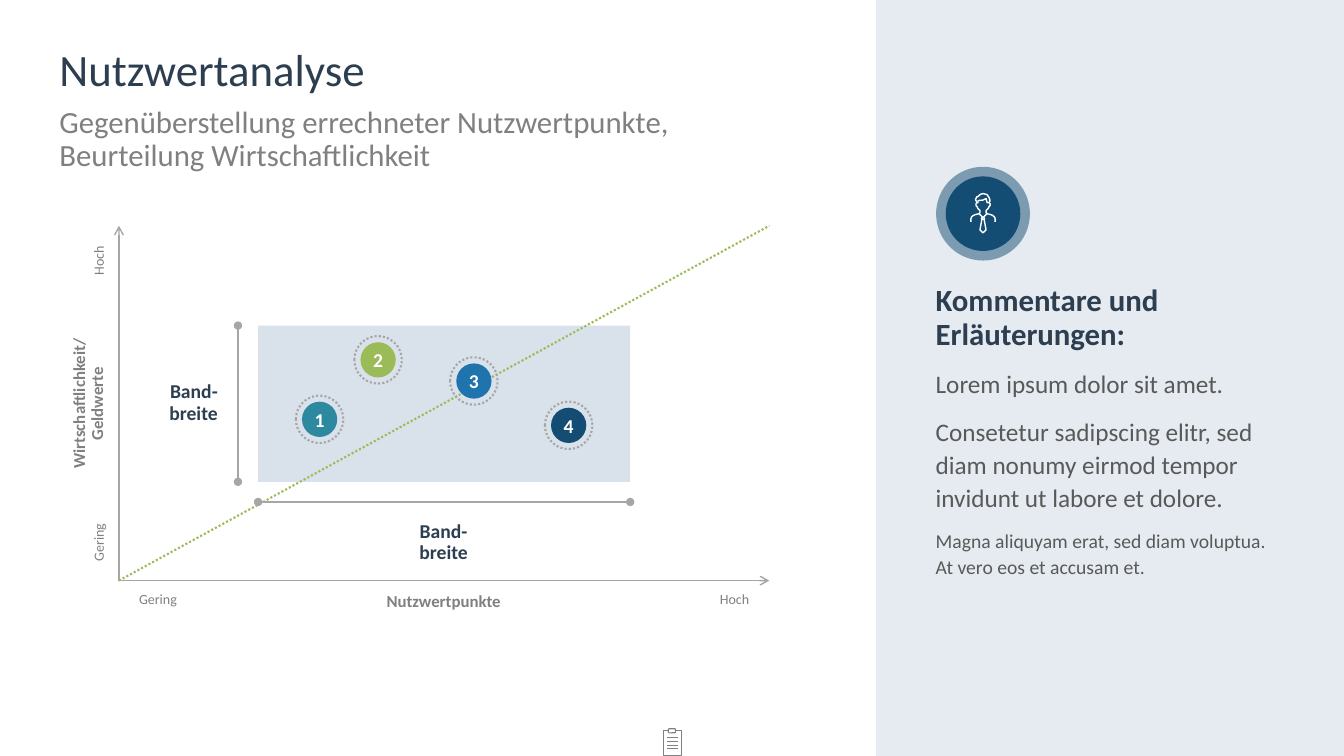
from pptx import Presentation
from pptx.dml.color import RGBColor
from pptx.enum.dml import MSO_LINE
from pptx.enum.shapes import MSO_CONNECTOR, MSO_SHAPE
from pptx.enum.text import MSO_ANCHOR, PP_ALIGN
from pptx.oxml.ns import qn
from pptx.util import Inches, Pt
from lxml import etree

RECT, OVAL, ROUND = MSO_SHAPE.RECTANGLE, MSO_SHAPE.OVAL, MSO_SHAPE.ROUNDED_RECTANGLE
LEFT, CENTER, RIGHT = PP_ALIGN.LEFT, PP_ALIGN.CENTER, PP_ALIGN.RIGHT
TOP, MIDDLE, BOTTOM = MSO_ANCHOR.TOP, MSO_ANCHOR.MIDDLE, MSO_ANCHOR.BOTTOM
STRAIGHT = MSO_CONNECTOR.STRAIGHT
DOTTED = MSO_LINE.ROUND_DOT

WHITE = RGBColor(0xFF, 0xFF, 0xFF)
DARK = RGBColor(0x2C, 0x3E, 0x50)
TEXT = RGBColor(0x59, 0x59, 0x59)
GRAY = RGBColor(0x80, 0x80, 0x80)
LINE = RGBColor(0xA6, 0xA6, 0xA6)
PANEL = RGBColor(0xCD, 0xD8, 0xE4)
BAND = RGBColor(0x6A, 0x8B, 0xAD)
NAVY = RGBColor(0x14, 0x4D, 0x73)
BLUE = RGBColor(0x1F, 0x74, 0xAD)
TEAL = RGBColor(0x2D, 0x89, 0x9F)
GREEN = RGBColor(0x9B, 0xBB, 0x59)

MARKERS = [("1", 3.17, 4.16, TEAL), ("2", 3.75, 3.57, GREEN),
           ("3", 4.7, 3.78, BLUE), ("4", 5.64, 4.22, NAVY)]

TIE = [(-1, 5), (-3, 16), (0, 19)]
SHOULDER = [(12, 8), (12, 5), (11.5, 3.5), (10, 2), (8, 1), (4, 0), (3, -1), (3, -3),
            (5, -5), (6, -7), (7, -8), (7, -10), (6, -11)]
PERSON = [
    [(2, 4), (0, 6), (-2, 4)],
    TIE, [(-x, y) for x, y in TIE],
    SHOULDER, [(-x, y) for x, y in SHOULDER],
    [(6, -11), (4, -11), (3, -15), (0, -13.5), (-5, -13), (-5, -11), (-6, -11)],
    [(4, 0), (0, 4), (-4, 0)],
    [(-6, -11), (-7.5, -14), (-6, -17), (-5, -17), (-3, -19), (0, -20),
     (4, -19), (6, -16), (7, -13), (6, -11)],
]


def write(p, text, size=14, color=DARK, bold=False, align=LEFT, spacing=0.9, after=10):
    p.text = text
    p.alignment = align
    p.line_spacing = spacing
    p.space_after = Pt(after)
    for r in p.runs:
        r.font.name = "Calibri"
        r.font.size = Pt(size)
        r.font.bold = bold
        r.font.color.rgb = color


def frame(s, anchor=TOP, wrap=True, insets=(0, 0, 0, 0)):
    tf = s.text_frame
    tf.word_wrap = wrap
    tf.vertical_anchor = anchor
    tf.margin_left, tf.margin_top, tf.margin_right, tf.margin_bottom = map(Inches, insets)
    return tf


def label(slide, text, x, y, w, h, anchor=TOP, wrap=True, upright=False, **fmt):
    s = slide.shapes.add_textbox(Inches(x), Inches(y), Inches(w), Inches(h))
    tf = frame(s, anchor, wrap)
    if upright:
        tf._txBody.bodyPr.set("vert", "vert270")
    write(tf.paragraphs[0], text, **fmt)


def shape(slide, kind, x, y, w, h, fill=None, alpha=None, line=None, width=1, dash=None):
    s = slide.shapes.add_shape(kind, Inches(x), Inches(y), Inches(w), Inches(h))
    s.shadow.inherit = False
    if fill is None:
        s.fill.background()
    else:
        s.fill.solid()
        s.fill.fore_color.rgb = fill
    if alpha:
        color = s._element.spPr.find(qn("a:solidFill"))[0]
        etree.SubElement(color, qn("a:alpha")).set("val", str(alpha * 1000))
    if line is None:
        s.line.fill.background()
    else:
        s.line.color.rgb = line
        s.line.width = Pt(width)
        s.line.dash_style = dash
    return s


def disc(slide, cx, cy, d, **fmt):
    return shape(slide, OVAL, cx - d / 2, cy - d / 2, d, d, **fmt)


def connect(slide, x1, y1, x2, y2, color=LINE, width=1, dash=None, head=None, tail=None):
    s = slide.shapes.add_connector(STRAIGHT, Inches(x1), Inches(y1), Inches(x2), Inches(y2))
    s.line.color.rgb = color
    s.line.width = Pt(width)
    s.line.dash_style = dash
    ln = s.line._get_or_add_ln()
    for tag, end in (("a:headEnd", head), ("a:tailEnd", tail)):
        if end:
            etree.SubElement(ln, qn(tag)).set("type", end)
    etree.SubElement(s._element.spPr, qn("a:effectLst"))


def person_icon(slide, cx, cy):
    disc(slide, cx, cy, 0.93, fill=NAVY, alpha=50)
    disc(slide, cx, cy, 0.74, fill=NAVY)
    for stroke in PERSON:
        pts = [(Inches(cx + x / 100), Inches(cy + y / 100)) for x, y in stroke]
        fb = slide.shapes.build_freeform(*pts[0])
        fb.add_line_segments(pts[1:], close=False)
        s = fb.convert_to_shape()
        s.shadow.inherit = False
        s.fill.background()
        s.line.color.rgb = WHITE
        s.line.width = Pt(1)


def header(slide, x, y, w):
    label(slide, "Nutzwertanalyse", x, y, w, 0.59, size=32)
    label(slide, "Gegenüberstellung errechneter Nutzwertpunkte, \nBeurteilung Wirtschaftlichkeit",
          x, y + 0.59, w, 0.59, size=22, color=GRAY)


def comments(slide, x, y, w, h):
    s = shape(slide, RECT, x, y, w, h, fill=PANEL, alpha=50)
    tf = frame(s, insets=(0.59, 2.83, 0.59, 1.18))
    write(tf.paragraphs[0], "Kommentare und Erläuterungen:", size=22, bold=True)
    for text, size in (
            ("Lorem ipsum dolor sit amet.", 18),
            ("Consetetur sadipscing elitr, sed diam nonumy eirmod tempor "
             "invidunt ut labore et dolore.", 18),
            ("Magna aliquyam erat, sed diam voluptua.\nAt vero eos et accusam et.", 14)):
        write(tf.add_paragraph(), text, size=size, color=TEXT, spacing=1.1)
    person_icon(slide, x + 1.06, y + 2.12)


def axes(slide, x, y, w, h):
    right, bottom = x + w, y + h
    small = dict(size=10, color=GRAY, wrap=False)
    name = dict(size=12, color=GRAY, bold=True, align=CENTER, wrap=False)
    side = dict(anchor=BOTTOM, upright=True)
    connect(slide, x, y, x, bottom, head="arrow")
    connect(slide, x, bottom, right, bottom, tail="arrow")
    label(slide, "Wirtschaftlichkeit/\nGeldwerte", x - 0.48, y + 1.11, 0.36, 1.31, **side, **name)
    label(slide, "Hoch", x - 0.27, y + 0.2, 0.15, 0.29, align=RIGHT, **side, **small)
    label(slide, "Gering", x - 0.27, bottom - 0.57, 0.15, 0.38, **side, **small)
    label(slide, "Gering", x + 0.2, bottom + 0.12, 0.38, 0.15, **small)
    label(slide, "Nutzwertpunkte", x + 2.65, bottom + 0.12, 1.14, 0.18, **name)
    label(slide, "Hoch", right - 0.49, bottom + 0.12, 0.29, 0.15, align=RIGHT, **small)
    connect(slide, x, bottom, right, y, color=GREEN, width=1.5, dash=DOTTED)


def bandwidth(slide, x, y, w, h):
    ends = dict(head="oval", tail="oval")
    bold = dict(size=14, bold=True)
    connect(slide, x - 0.2, y, x - 0.2, y + h, **ends)
    connect(slide, x, y + h + 0.2, x + w, y + h + 0.2, **ends)
    label(slide, "Band-\nbreite", x - 0.99, y + h / 2 - 0.2, 0.59, 0.39,
          anchor=MIDDLE, align=RIGHT, **bold)
    label(slide, "Band-\nbreite", x + w / 2 - 0.3, y + h + 0.39, 0.59, 0.39,
          align=CENTER, **bold)


def marker(slide, text, cx, cy, color):
    disc(slide, cx, cy, 0.47, line=LINE, width=1.5, dash=DOTTED)
    tf = frame(disc(slide, cx, cy, 0.35, fill=color), MIDDLE)
    write(tf.paragraphs[0], text, color=WHITE, bold=True, align=CENTER, spacing=1, after=0)


def clipboard(slide, x, y):
    shape(slide, RECT, x + 0.01, y + 0.03, 0.18, 0.25, line=GRAY, width=0.75)
    shape(slide, ROUND, x + 0.06, y + 0.01, 0.07, 0.04, fill=WHITE, line=GRAY, width=0.75)
    for i in range(4):
        ly = y + 0.1 + i * 0.035
        connect(slide, x + 0.05, ly, x + 0.15, ly, color=GRAY, width=0.5)


def main():
    prs = Presentation()
    prs.slide_width, prs.slide_height = Inches(13.33), Inches(7.5)
    slide = prs.slides.add_slide(prs.slide_layouts[6])
    band = (2.56, 3.23, 3.69, 1.55)
    header(slide, 0.59, 0.47, 8)
    comments(slide, 8.69, 0, 4.64, 7.5)
    shape(slide, RECT, *band, fill=BAND, alpha=25)
    axes(slide, 1.18, 2.24, 6.45, 3.52)
    bandwidth(slide, *band)
    for item in MARKERS:
        marker(slide, *item)
    clipboard(slide, 6.57, 7.22)
    prs.save("out.pptx")


if __name__ == "__main__":
    main()
